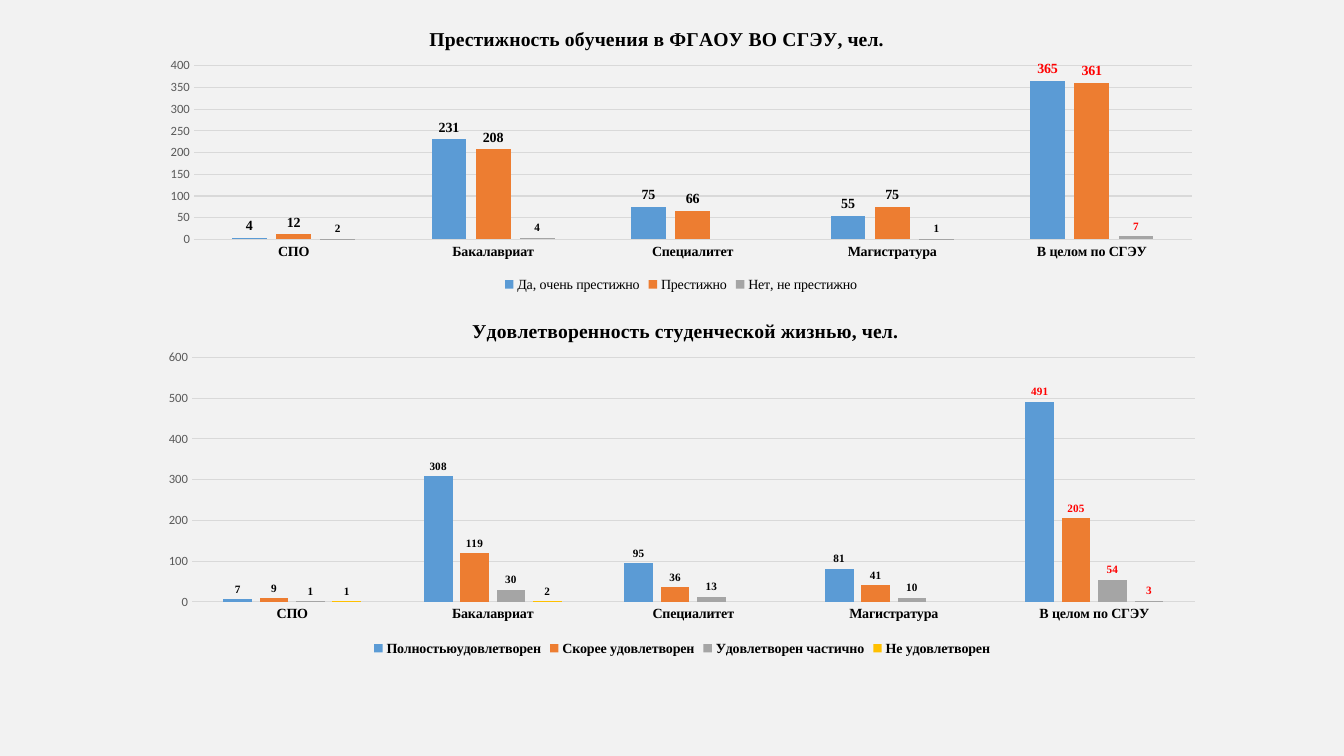
from dataclasses import dataclass

from lxml import etree
from pptx import Presentation
from pptx.chart.chart import Chart
from pptx.chart.data import CategoryChartData
from pptx.chart.series import BarSeries
from pptx.dml.color import RGBColor
from pptx.enum.chart import XL_CHART_TYPE, XL_LABEL_POSITION, XL_LEGEND_POSITION, XL_TICK_MARK
from pptx.oxml.ns import qn
from pptx.slide import Slide
from pptx.text.text import Font
from pptx.util import Inches, Pt

COLUMNS = XL_CHART_TYPE.COLUMN_CLUSTERED
OUTSIDE_END = XL_LABEL_POSITION.OUTSIDE_END
BOTTOM = XL_LEGEND_POSITION.BOTTOM
NO_TICKS = XL_TICK_MARK.NONE

BACKGROUND = RGBColor(0xF2, 0xF2, 0xF2)
BLACK = RGBColor(0, 0, 0)
RED = RGBColor(0xFF, 0, 0)
AXIS_TEXT = RGBColor(0x59, 0x59, 0x59)
GRID = RGBColor(0xD9, 0xD9, 0xD9)
BLUE = RGBColor(0x5B, 0x9B, 0xD5)
ORANGE = RGBColor(0xED, 0x7D, 0x31)
GRAY = RGBColor(0xA5, 0xA5, 0xA5)
YELLOW = RGBColor(0xFF, 0xC0, 0)
ANSWER_COLORS = (BLUE, ORANGE, GRAY, YELLOW)

SERIF = "Times New Roman"
SANS = "Calibri"
LEVELS = ("СПО", "Бакалавриат", "Специалитет", "Магистратура", "В целом по СГЭУ")
TOTAL = len(LEVELS) - 1


@dataclass(frozen=True)
class Answer:
    name: str
    counts: tuple[int | None, ...]
    label_size: int = 8


@dataclass(frozen=True)
class Survey:
    """One chart; title_at and plot_at are fractions of the chart area."""
    title: str
    box: tuple[float, float, float, float]
    title_at: tuple[float, float]
    plot_at: tuple[float, float, float, float]
    axis_max: int
    axis_step: int
    legend_bold: bool
    answers: tuple[Answer, ...]


SURVEYS = (
    Survey(
        "Престижность обучения в ФГАОУ ВО СГЭУ, чел.",
        (1.48, 0.08, 10.55, 2.86), (0.26, 0.05), (0.042, 0.2, 0.938, 0.603),
        400, 50, False,
        (
            Answer("Да, очень престижно", (4, 231, 75, 55, 365), 10),
            Answer("Престижно", (12, 208, 66, 75, 361), 10),
            Answer("Нет, не престижно", (2, 4, None, 1, 7)),
        ),
    ),
    Survey(
        "Удовлетворенность студенческой жизнью, чел.",
        (1.47, 2.94, 10.59, 3.61), (0.3, 0.05), (0.041, 0.168, 0.939, 0.672),
        600, 100, True,
        (
            Answer("Полностьюудовлетворен", (7, 308, 95, 81, 491)),
            Answer("Скорее удовлетворен", (9, 119, 36, 41, 205)),
            Answer("Удовлетворен частично", (1, 30, 13, 10, 54)),
            Answer("Не удовлетворен", (1, 2, None, None, 3)),
        ),
    ),
)


def format_font(font: Font, *, size: float = 10, color: RGBColor = BLACK,
                bold: bool = False, name: str = SERIF) -> None:
    font.size = Pt(size)
    font.color.rgb = color
    font.bold = bold
    font.name = name


def write_title(chart: Chart, text: str, **text_format) -> None:
    chart.has_title = True
    paragraph = chart.chart_title.text_frame.paragraphs[0]
    run = paragraph.add_run()
    run.text = text
    format_font(run.font, **text_format)


def set_layout(parent: etree._Element, index: int, **fractions: float) -> None:
    """Place a chart part by hand; index is its layout's place among the children."""
    old = parent.find(qn("c:layout"))
    if old is not None:
        parent.remove(old)
    layout = etree.Element(qn("c:layout"))
    parent.insert(index, layout)
    manual = etree.SubElement(layout, qn("c:manualLayout"))
    if "w" in fractions:
        etree.SubElement(manual, qn("c:layoutTarget"), val="inner")
    for side in ("x", "y"):
        etree.SubElement(manual, qn(f"c:{side}Mode"), val="edge")
    for side, fraction in fractions.items():
        etree.SubElement(manual, qn(f"c:{side}"), val=str(fraction))


def style_axes(chart: Chart, survey: Survey) -> None:
    levels = chart.category_axis
    levels.major_tick_mark = levels.minor_tick_mark = NO_TICKS
    levels.format.line.color.rgb = GRID
    levels.format.line.width = Pt(0.75)
    format_font(levels.tick_labels.font, bold=True)

    people = chart.value_axis
    people.major_tick_mark = people.minor_tick_mark = NO_TICKS
    people.minimum_scale = 0
    people.maximum_scale = survey.axis_max
    people.major_unit = survey.axis_step
    people.format.line.fill.background()
    people.has_major_gridlines = True
    people.major_gridlines.format.line.color.rgb = GRID
    people.major_gridlines.format.line.width = Pt(0.75)
    format_font(people.tick_labels.font, size=9, color=AXIS_TEXT, name=SANS)


def style_answer(series: BarSeries, answer: Answer, color: RGBColor) -> None:
    series.format.fill.solid()
    series.format.fill.fore_color.rgb = color
    series.invert_if_negative = False
    labels = series.data_labels
    labels.show_value = True
    labels.position = OUTSIDE_END
    format_font(labels.font, size=answer.label_size, bold=True)
    total_label = series.points[TOTAL].data_label
    format_font(total_label.font, size=answer.label_size, color=RED, bold=True)
    total_label.position = OUTSIDE_END


def add_survey(slide: Slide, survey: Survey) -> Chart:
    data = CategoryChartData()
    data.categories = LEVELS
    for answer in survey.answers:
        data.add_series(answer.name, answer.counts)
    box = (Inches(length) for length in survey.box)
    chart = slide.shapes.add_chart(COLUMNS, *box, data).chart
    format_font(chart.font, name=SANS)

    write_title(chart, survey.title, size=14, bold=True)
    title_x, title_y = survey.title_at
    set_layout(chart.chart_title._element, 1, x=title_x, y=title_y)
    plot_x, plot_y, plot_w, plot_h = survey.plot_at
    plot_area = chart._chartSpace.chart.plotArea
    set_layout(plot_area, 0, x=plot_x, y=plot_y, w=plot_w, h=plot_h)

    chart.has_legend = True
    chart.legend.position = BOTTOM
    chart.legend.include_in_layout = False
    format_font(chart.legend.font, bold=survey.legend_bold)
    style_axes(chart, survey)

    plot = chart.plots[0]
    plot.gap_width = 219
    plot.overlap = -27
    plot.vary_by_categories = False
    for series, answer, color in zip(plot.series, survey.answers, ANSWER_COLORS):
        style_answer(series, answer, color)
    return chart


def main() -> None:
    presentation = Presentation()
    presentation.slide_width = Inches(13.33)
    presentation.slide_height = Inches(7.5)
    slide = presentation.slides.add_slide(presentation.slide_layouts[6])
    slide.background.fill.solid()
    slide.background.fill.fore_color.rgb = BACKGROUND

    prestige, satisfaction = (add_survey(slide, survey) for survey in SURVEYS)
    dissatisfied_total = satisfaction.plots[0].series[3].points[TOTAL]
    dissatisfied_total.format.fill.solid()
    dissatisfied_total.format.fill.fore_color.rgb = GRAY

    presentation.save("out.pptx")


if __name__ == "__main__":
    main()
